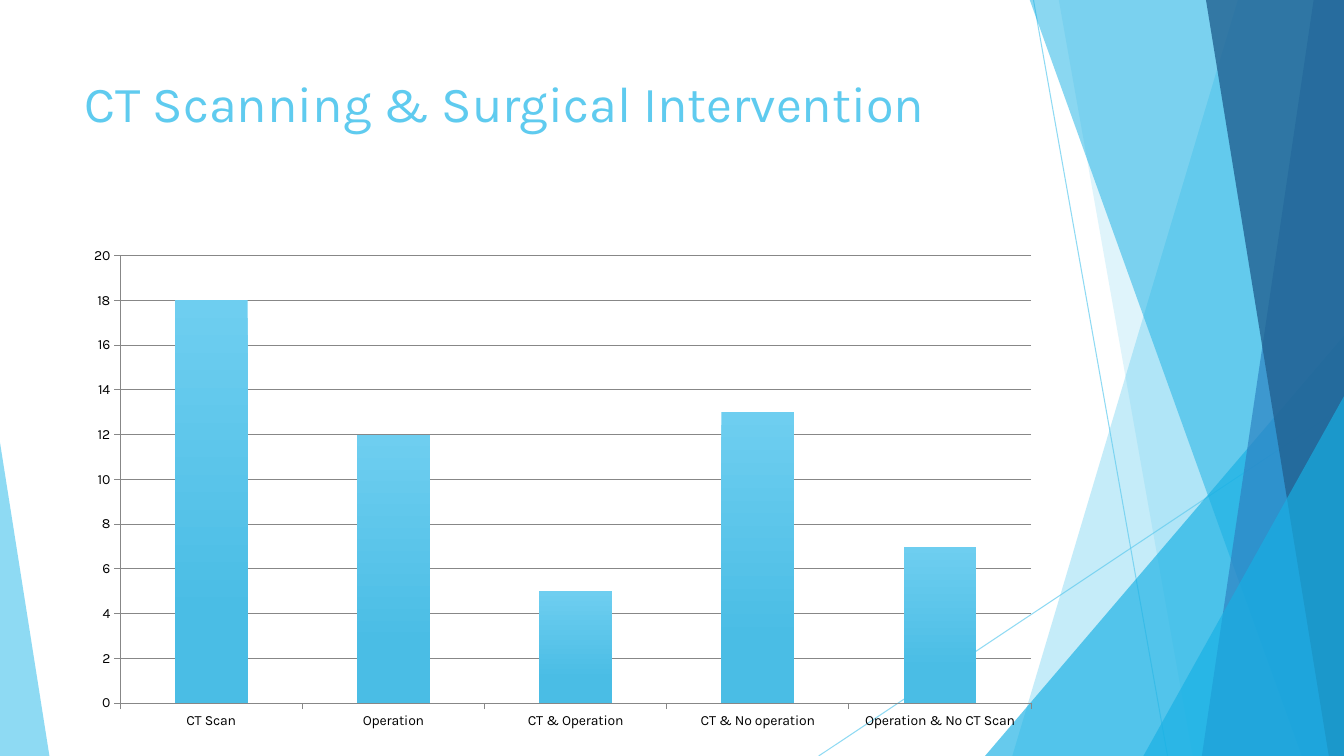
from lxml import etree
from pptx import Presentation
from pptx.chart.data import CategoryChartData
from pptx.dml.color import RGBColor
from pptx.enum.chart import XL_CHART_TYPE, XL_TICK_MARK
from pptx.enum.shapes import MSO_CONNECTOR, MSO_SHAPE
from pptx.enum.text import MSO_ANCHOR, PP_ALIGN
from pptx.oxml.ns import qn
from pptx.util import Inches, Pt

COLUMN = XL_CHART_TYPE.COLUMN_CLUSTERED
TICK_OUT = XL_TICK_MARK.OUTSIDE
TICK_NONE = XL_TICK_MARK.NONE
STRAIGHT = MSO_CONNECTOR.STRAIGHT
TRIANGLE = MSO_SHAPE.ISOSCELES_TRIANGLE
TOP = MSO_ANCHOR.TOP
LEFT = PP_ALIGN.LEFT

FONT = "Karla"
WIDTH, HEIGHT = 13.33, 7.5
BAND_TOP = -0.01
COLORS = {
    "sky": "5FCBEF",
    "cyan": "17B0E4",
    "blue": "2E83C3",
    "navy": "226292",
    "bar_top": "6ECEF0",
    "bar_bottom": "4ABDE5",
    "grid": "878787",
    "text": "000000",
}


def rgb(name):
    return RGBColor.from_string(COLORS[name])


def set_alpha(fill_parent, percent):
    """Make the solid colour inside fill_parent partly transparent."""
    color = fill_parent.find(qn("a:solidFill"))[0]
    etree.SubElement(color, qn("a:alpha")).set("val", str(percent * 1000))


def paint(sp, color, alpha):
    sp.shadow.inherit = False
    sp.fill.solid()
    sp.fill.fore_color.rgb = rgb(color)
    set_alpha(sp._element.spPr, alpha)
    sp.line.fill.background()


def add_thin_line(slide, x1, y1, x2, y2):
    line = slide.shapes.add_connector(
        STRAIGHT, Inches(x1), Inches(y1), Inches(x2), Inches(y2))
    line.line.color.rgb = rgb("sky")
    line.line.width = Pt(0.75)
    spPr = line._element.spPr
    set_alpha(spPr.find(qn("a:ln")), 70)
    etree.SubElement(spPr, qn("a:effectLst"))


def add_band(slide, top_x, bottom_x, color, alpha):
    """Fill from a slanted left edge to the right edge of the slide."""
    points = [(WIDTH, BAND_TOP), (WIDTH, HEIGHT), (bottom_x, HEIGHT)]
    builder = slide.shapes.build_freeform(Inches(top_x), Inches(BAND_TOP))
    builder.add_line_segments([(Inches(x), Inches(y)) for x, y in points])
    paint(builder.convert_to_shape(), color, alpha)


def add_corner(slide, left, top, width, apex, color, alpha):
    """Add a triangle on the bottom edge; apex is 0 for left, 1 for right."""
    sp = slide.shapes.add_shape(
        TRIANGLE, Inches(left), Inches(top), Inches(width), Inches(HEIGHT - top))
    sp.adjustments[0] = apex
    paint(sp, color, alpha)


def add_background(slide):
    add_thin_line(slide, 10.25, 0, 11.58, HEIGHT)
    add_thin_line(slide, WIDTH, 4.03, 8.12, HEIGHT)
    add_band(slide, 12.28, 10.04, "sky", 36)
    add_band(slide, 10.5, 11.83, "sky", 20)
    add_corner(slide, 9.77, 3.33, 3.56, 1, "cyan", 66)
    add_band(slide, 10.21, 12.91, "cyan", 50)
    add_band(slide, 13.03, 11.92, "blue", 70)
    add_band(slide, 11.96, 13.18, "navy", 80)
    add_corner(slide, 11.34, 3.93, 1.99, 1, "cyan", 66)
    add_corner(slide, 0, 4.39, 0.49, 0, "sky", 70)


def set_title(slide, text):
    title = slide.shapes.title
    title.left, title.top = Inches(0.74), Inches(0.67)
    title.width, title.height = Inches(9.4), Inches(1.44)
    tf = title.text_frame
    tf.text = text
    tf.word_wrap = True
    tf.vertical_anchor = TOP
    p = tf.paragraphs[0]
    p.alignment = LEFT
    font = p.runs[0].font
    font.name, font.size = FONT, Pt(36)
    font.color.rgb = rgb("sky")


def style_line(line):
    line.color.rgb = rgb("grid")
    line.width = Pt(0.75)


def add_column_chart(slide, categories, values):
    data = CategoryChartData()
    data.categories = categories
    data.add_series("Series 1", values)
    chart = slide.shapes.add_chart(
        COLUMN, Inches(0.74), Inches(2.36), Inches(9.68), Inches(4.97), data).chart
    chart.has_legend = False
    chart.has_title = False
    chart.font.name, chart.font.size = FONT, Pt(10)
    chart.font.color.rgb = rgb("text")

    for axis in (chart.category_axis, chart.value_axis):
        axis.major_tick_mark = TICK_OUT
        axis.minor_tick_mark = TICK_NONE
        style_line(axis.format.line)
    value_axis = chart.value_axis
    value_axis.minimum_scale, value_axis.maximum_scale = 0, 20
    value_axis.major_unit = 2
    value_axis.has_major_gridlines = True
    style_line(value_axis.major_gridlines.format.line)

    plot = chart.plots[0]
    plot.gap_width = 150
    plot.vary_by_categories = False
    fill = plot.series[0].format.fill
    fill.gradient()
    fill.gradient_angle = 270
    stops = zip(fill.gradient_stops, ("bar_top", "bar_bottom"), (0, 0.78))
    for stop, color, position in stops:
        stop.color.rgb = rgb(color)
        stop.position = position


def main():
    prs = Presentation()
    prs.slide_width, prs.slide_height = Inches(WIDTH), Inches(HEIGHT)
    slide = prs.slides.add_slide(prs.slide_layouts[5])
    add_background(slide)
    set_title(slide, "CT Scanning & Surgical Intervention")
    add_column_chart(
        slide,
        ["CT Scan", "Operation", "CT & Operation", "CT & No operation",
         "Operation & No CT Scan"],
        [18, 12, 5, 13, 7])
    prs.save("out.pptx")


if __name__ == "__main__":
    main()
